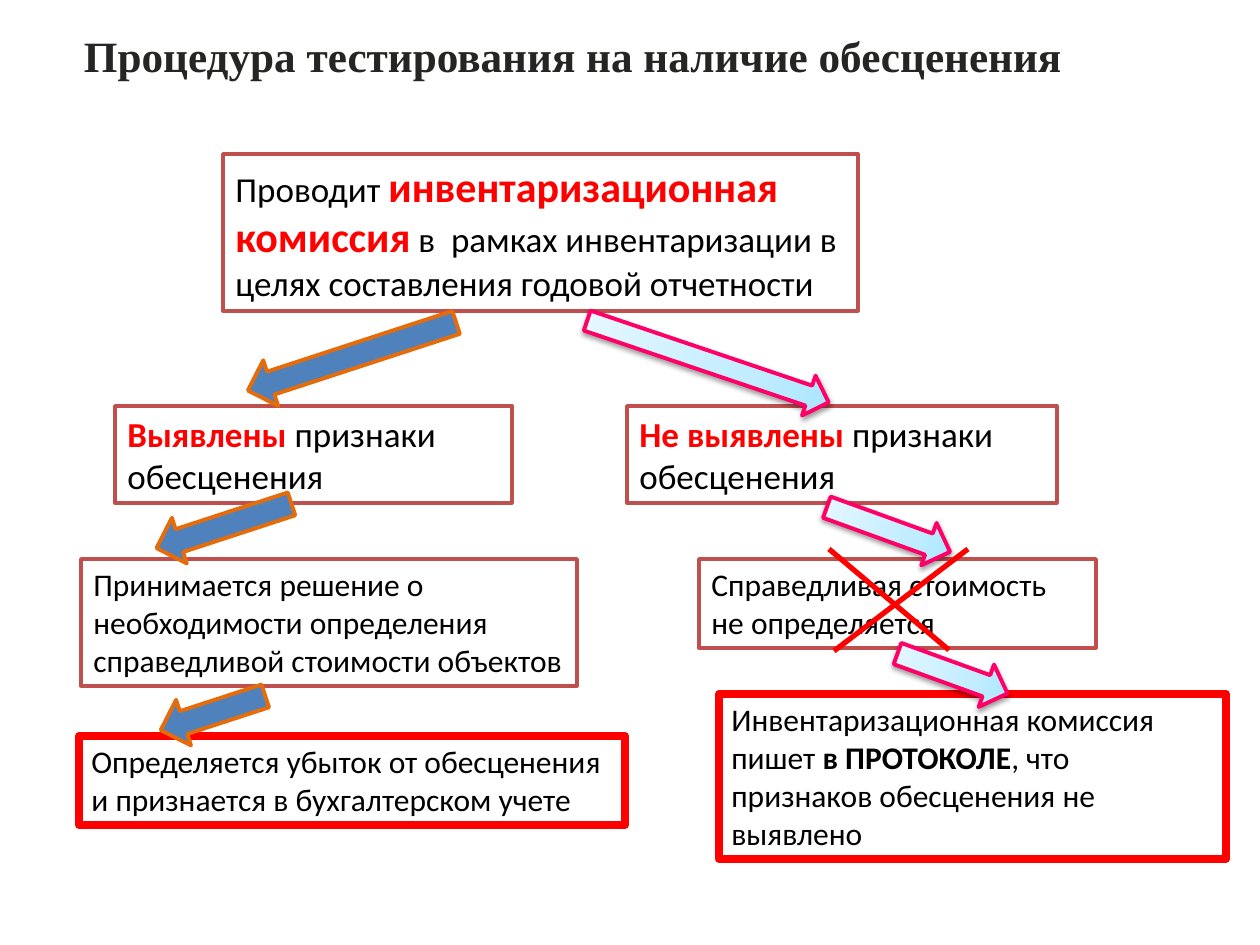
import pptx
import pptx.util
import pptx.dml.color
import pptx.enum.shapes
import pptx.enum.text
import pptx.oxml
import pptx.oxml.ns

RGB = pptx.dml.color.RGBColor
Pt = pptx.util.Pt
SHAPES = pptx.enum.shapes.MSO_SHAPE
NS = pptx.oxml.ns.nsdecls("a")

INK = RGB(0x25, 0x25, 0x23)
BLACK = RGB(0x00, 0x00, 0x00)
WHITE = RGB(0xFF, 0xFF, 0xFF)
RED = RGB(0xFF, 0x00, 0x00)
BRICK = RGB(0xC0, 0x50, 0x4D)
BLUE = RGB(0x4F, 0x81, 0xBD)
ORANGE = RGB(0xE4, 0x6C, 0x0A)
PINK = RGB(0xFF, 0x00, 0x66)
ICE = [(0, RGB(0xA7, 0xE6, 0xFF)), (35, RGB(0xC1, 0xED, 0xFF)), (100, RGB(0xE7, 0xF8, 0xFF))]


def px(*lengths):
    return [round(length * 914400 / 126) for length in lengths]


def write_run(paragraph, text, color, **font_format):
    run = paragraph.add_run()
    run.text = text
    run.font.color.rgb = color
    for key, value in font_format.items():
        setattr(run.font, key, value)


deck = pptx.Presentation()
deck.slide_width, deck.slide_height = px(1260, 945)
slide = deck.slides.add_slide(deck.slide_layouts[5])

heading = slide.shapes.title
heading.left, heading.top, heading.width, heading.height = px(84, 29, 1091, 53)
frame_format = {
    "margin_left": 0,
    "margin_top": 0,
    "margin_right": 0,
    "margin_bottom": 0,
    "word_wrap": True,
    "vertical_anchor": pptx.enum.text.MSO_ANCHOR.MIDDLE,
    "auto_size": pptx.enum.text.MSO_AUTO_SIZE.NONE,
}
for key, value in frame_format.items():
    setattr(heading.text_frame, key, value)
heading_line = heading.text_frame.paragraphs[0]
heading_line.alignment = pptx.enum.text.PP_ALIGN.LEFT
write_run(heading_line, "Процедура тестирования на наличие обесценения", INK,
          name="Times New Roman", size=Pt(24.7), bold=True)

steps = [
    ((223, 154, 635, 157), BRICK, 2, [
        ("Проводит ", 20, BLACK, False),
        ("инвентаризационная комиссия", 24, RED, True),
        (" в  рамках инвентаризации в целях составления годовой отчетности", 20, BLACK, False)]),
    ((81, 559, 496, 127), BRICK, 2, [
        ("Принимается решение о необходимости определения справедливой стоимости объектов",
         18, BLACK, False)]),
    ((115, 406, 397, 97), BRICK, 2, [
        ("Выявлены", 20, RED, True),
        (" признаки обесценения", 20, BLACK, False)]),
    ((627, 406, 430, 97), BRICK, 2, [
        ("Не выявлены ", 20, RED, True),
        ("признаки обесценения", 20, BLACK, False)]),
    ((699, 559, 397, 89), BRICK, 2, [
        ("Справедливая стоимость не определяется", 18, BLACK, False)]),
    ((719, 694, 507, 165), RED, 4.5, [
        ("Инвентаризационная комиссия пишет ", 18, BLACK, False),
        ("в ПРОТОКОЛЕ", 18, BLACK, True),
        (", что признаков обесценения не выявлено", 18, BLACK, False)]),
    ((79, 736, 546, 89), RED, 4.5, [
        ("Определяется убыток от обесценения и признается в бухгалтерском учете",
         18, BLACK, False)]),
]
for place, border, weight, wording in steps:
    step = slide.shapes.add_shape(SHAPES.RECTANGLE, *px(*place))
    step.shadow.inherit = False
    step.fill.solid()
    step.fill.fore_color.rgb = WHITE
    step.line.color.rgb = border
    step.line.width = Pt(weight)
    step.text_frame.word_wrap = True
    step.text_frame.vertical_anchor = pptx.enum.text.MSO_ANCHOR.TOP
    step_line = step.text_frame.paragraphs[0]
    step_line.alignment = pptx.enum.text.PP_ALIGN.LEFT
    for text, size, color, bold in wording:
        write_run(step_line, text, color, name="Calibri", size=Pt(size), bold=bold)

stops = "".join(
    f'<a:gs pos="{share * 1000}"><a:srgbClr val="{color}"/></a:gs>' for share, color in ICE)
shadow = (f'<a:outerShdw {NS} blurRad="{Pt(3.1)}" dist="{Pt(1.6)}" dir="5400000" rotWithShape="0">'
          '<a:srgbClr val="000000"><a:alpha val="38000"/></a:srgbClr></a:outerShdw>')
branches = [
    ((687, 234, 42, 255), 288.7, PINK),
    ((866, 464, 45, 131), 289.9, PINK),
    ((328, 247, 48, 219), 71.9, ORANGE),
    ((200, 455, 48, 142), 71.9, ORANGE),
    ((189, 658, 48, 110), 71.9, ORANGE),
    ((930, 615, 45, 117), 289.9, PINK),
]
for place, turn, outline in branches:
    branch = slide.shapes.add_shape(SHAPES.DOWN_ARROW, *px(*place))
    branch.rotation = turn
    branch.shadow.inherit = False
    branch.line.color.rgb = outline
    branch.line.width = Pt(2.25)
    if outline == ORANGE:
        branch.fill.solid()
        branch.fill.fore_color.rgb = BLUE
        continue
    branch.fill.gradient()
    branch.fill.gradient_angle = 90
    properties = branch._element.spPr
    old_stops = properties.find(".//" + pptx.oxml.ns.qn("a:gsLst"))
    old_stops.getparent().replace(
        old_stops, pptx.oxml.parse_xml(f"<a:gsLst {NS}>{stops}</a:gsLst>"))
    properties.find(pptx.oxml.ns.qn("a:effectLst")).append(pptx.oxml.parse_xml(shadow))

for ends in [(968, 549, 834, 651), (829, 549, 949, 650)]:
    cross = slide.shapes.add_connector(pptx.enum.shapes.MSO_CONNECTOR.STRAIGHT, *px(*ends))
    cross.line.color.rgb = RED
    cross.line.width = Pt(3)
    cross._element.spPr.append(pptx.oxml.parse_xml(f"<a:effectLst {NS}/>"))

deck.save("out.pptx")
